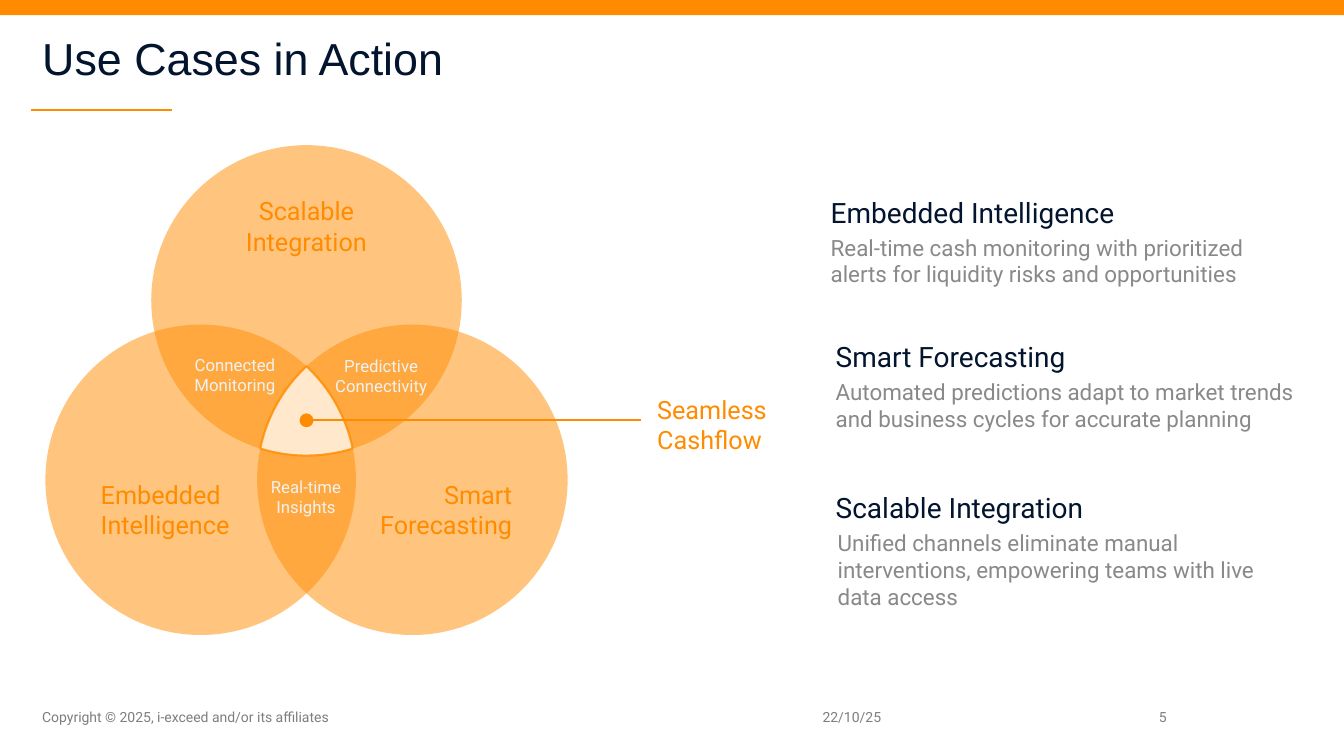
from math import cos, radians, sin

from lxml import etree
from pptx import Presentation
from pptx.dml.color import RGBColor
from pptx.enum.shapes import MSO_CONNECTOR, MSO_SHAPE
from pptx.enum.text import MSO_ANCHOR as Anchor, PP_ALIGN as Align
from pptx.oxml.ns import qn
from pptx.util import Inches, Pt

COLORS = {
    "orange": "FF8C00",
    "cream": "FFE8CC",
    "navy": "03142E",
    "gray": "898989",
    "footer": "7E7E7E",
    "pale": "EFF2F1",
}

prs = Presentation()
prs.slide_width, prs.slide_height = Inches(13.33), Inches(7.5)
slide = prs.slides.add_slide(prs.slide_layouts[6])
shapes = slide.shapes


def write(shape, text, size, color, align=Align.LEFT, anchor=Anchor.TOP, font="Roboto"):
    frame = shape.text_frame
    frame.word_wrap = True
    frame.vertical_anchor = anchor
    paragraph = frame.paragraphs[0]
    paragraph.text = text
    paragraph.alignment = align
    paragraph.font.name = font
    paragraph.font.size = Pt(size)
    paragraph.font.color.rgb = RGBColor.from_string(COLORS[color])
    return frame


def paint(shape, color, opacity=100):
    shape.shadow.inherit = False
    shape.fill.solid()
    shape.fill.fore_color.rgb = RGBColor.from_string(COLORS[color])
    shape.line.fill.background()
    if opacity < 100:
        tint = shape.fill._xPr.find(qn("a:solidFill"))[0]
        etree.SubElement(tint, qn("a:alpha"), val=str(opacity * 1000))


# Top bar and title
top_bar = shapes.add_shape(MSO_SHAPE.RECTANGLE, 0, 0, prs.slide_width, Inches(0.15))
paint(top_bar, "orange")
title = shapes.add_textbox(Inches(0.32), Inches(0.15), Inches(12.7), Inches(0.74))
title_frame = write(title, "Use Cases in Action", 32, "navy", anchor=Anchor.BOTTOM, font="Arial")
title_frame.paragraphs[0].line_spacing = 0.9

# Footer
for text, left, width, align in [
    ("Copyright © 2025, i-exceed and/or its affiliates", 0.32, 6.84, Align.LEFT),
    ("22/10/25", 8.06, 1.68, Align.LEFT),
    ("5", 10.65, 1.02, Align.RIGHT),
]:
    footer = shapes.add_textbox(Inches(left), Inches(6.85), Inches(width), Inches(0.4))
    write(footer, text, 10, "footer", align, Anchor.BOTTOM)

# Three overlapping circles; the lower labels sit below the middle
RADIUS = 1.54
for text, x, y, align, anchor, inset in [
    ("Scalable Integration", 3.04, 2.98, Align.CENTER, Anchor.TOP, 0.05),
    ("Embedded Intelligence", 1.99, 4.76, Align.LEFT, Anchor.MIDDLE, 0.64),
    ("Smart Forecasting", 4.09, 4.76, Align.RIGHT, Anchor.MIDDLE, 0.64),
]:
    circle = shapes.add_shape(
        MSO_SHAPE.OVAL, Inches(x - RADIUS), Inches(y - RADIUS), Inches(2 * RADIUS), Inches(2 * RADIUS)
    )
    paint(circle, "orange", 50)
    write(circle, text, 18, "orange", align, anchor).margin_top = Inches(inset)

# Labels where two circles overlap
for text, left, top, width in [
    ("Real-time Insights", 2.54, 4.68, 0.99),
    ("Predictive Connectivity", 3.22, 3.48, 1.12),
    ("Connected Monitoring", 1.77, 3.47, 1.12),
]:
    overlap = shapes.add_textbox(Inches(left), Inches(top), Inches(width), Inches(0.5))
    write(overlap, text, 12, "pale", Align.CENTER)

# Core shared by all circles: one arc from each
STEPS = 16
outline = []
for x, y, start, end in [
    (1.99, 4.76, -47, -11.7),
    (3.04, 2.98, 73, 107),
    (4.09, 4.76, 191.7, 227),
]:
    for step in range(STEPS + 1):
        angle = radians(start + (end - start) * step / STEPS)
        outline.append((Inches(x + RADIUS * cos(angle)), Inches(y + RADIUS * sin(angle))))
builder = shapes.build_freeform(*outline[0])
builder.add_line_segments(outline[1:], close=True)
core = builder.convert_to_shape()
paint(core, "cream")
core.line.color.rgb = RGBColor.from_string(COLORS["orange"])
core.line.width = Pt(1.5)
core_tint = core.line.fill._xPr.find(qn("a:solidFill"))[0]
etree.SubElement(core_tint, qn("a:alpha"), val="82000")

# Title underline and the leader line from the core
for left, right, y, dotted in [(0.31, 1.71, 1.09, False), (3.04, 6.36, 4.17, True)]:
    rule = shapes.add_connector(MSO_CONNECTOR.STRAIGHT, Inches(left), Inches(y), Inches(right), Inches(y))
    rule.line.color.rgb = RGBColor.from_string(COLORS["orange"])
    rule.line.width = Pt(1.5)
    if dotted:
        etree.SubElement(rule.line._get_or_add_ln(), qn("a:headEnd"), type="oval", w="lg", len="lg")
    etree.SubElement(rule._element.spPr, qn("a:effectLst"))

callout = shapes.add_textbox(Inches(6.42), Inches(3.86), Inches(1.4), Inches(0.71))
write(callout, "Seamless Cashflow", 18, "orange")

# Use case descriptions
for heading, heading_left, heading_top, spacing, body, body_left, body_top, body_height in [
    ("Embedded Intelligence", 8.14, 1.93, 0.9,
     "Real-time cash monitoring with prioritized alerts for liquidity risks and opportunities",
     8.14, 2.27, 0.64),
    ("Smart Forecasting", 8.19, 3.32, 1.0,
     "Automated predictions adapt to market trends and business cycles for accurate planning",
     8.19, 3.7, 0.64),
    ("Scalable Integration", 8.19, 4.82, 1.0,
     "Unified channels eliminate manual interventions, empowering teams with live data access",
     8.21, 5.2, 0.91),
]:
    use_case = shapes.add_textbox(Inches(heading_left), Inches(heading_top), Inches(4.44), Inches(0.43))
    write(use_case, heading, 20, "navy").paragraphs[0].line_spacing = spacing
    benefit = shapes.add_textbox(Inches(body_left), Inches(body_top), Inches(4.75), Inches(body_height))
    write(benefit, body, 16, "gray")

prs.save("out.pptx")
